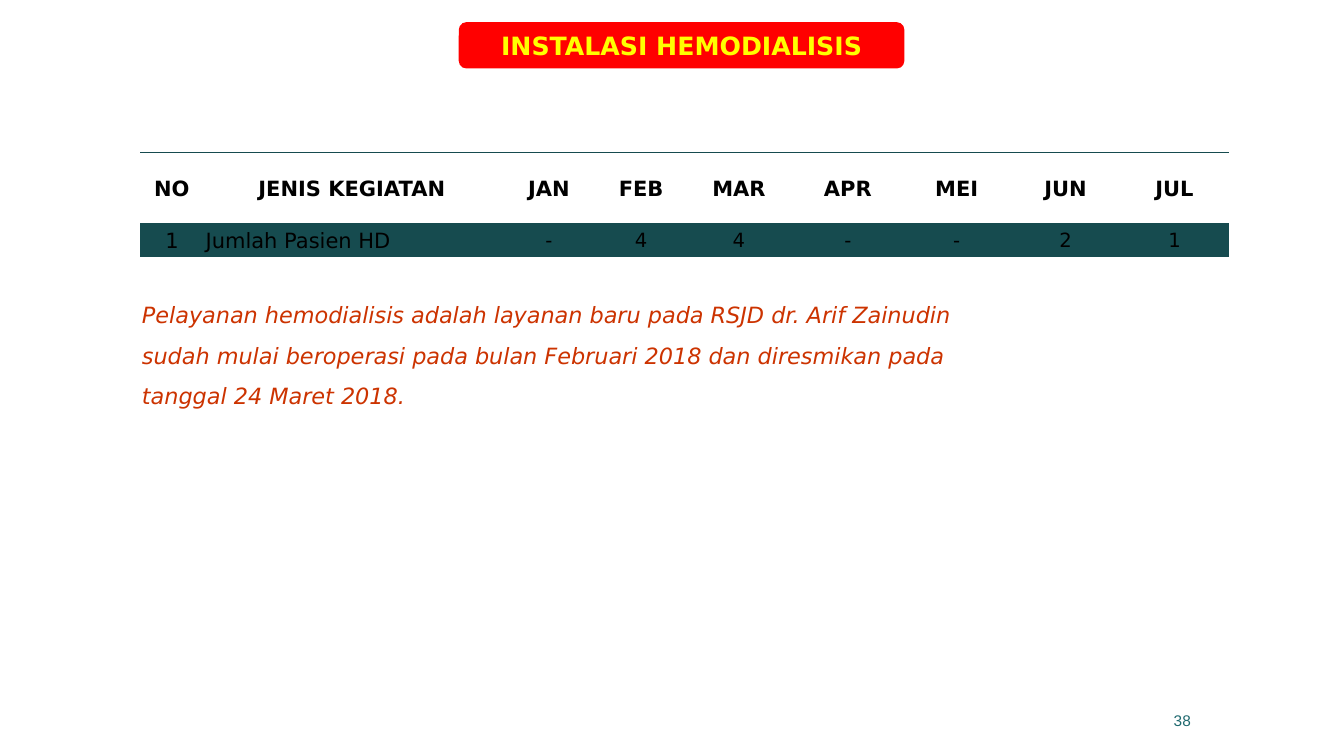
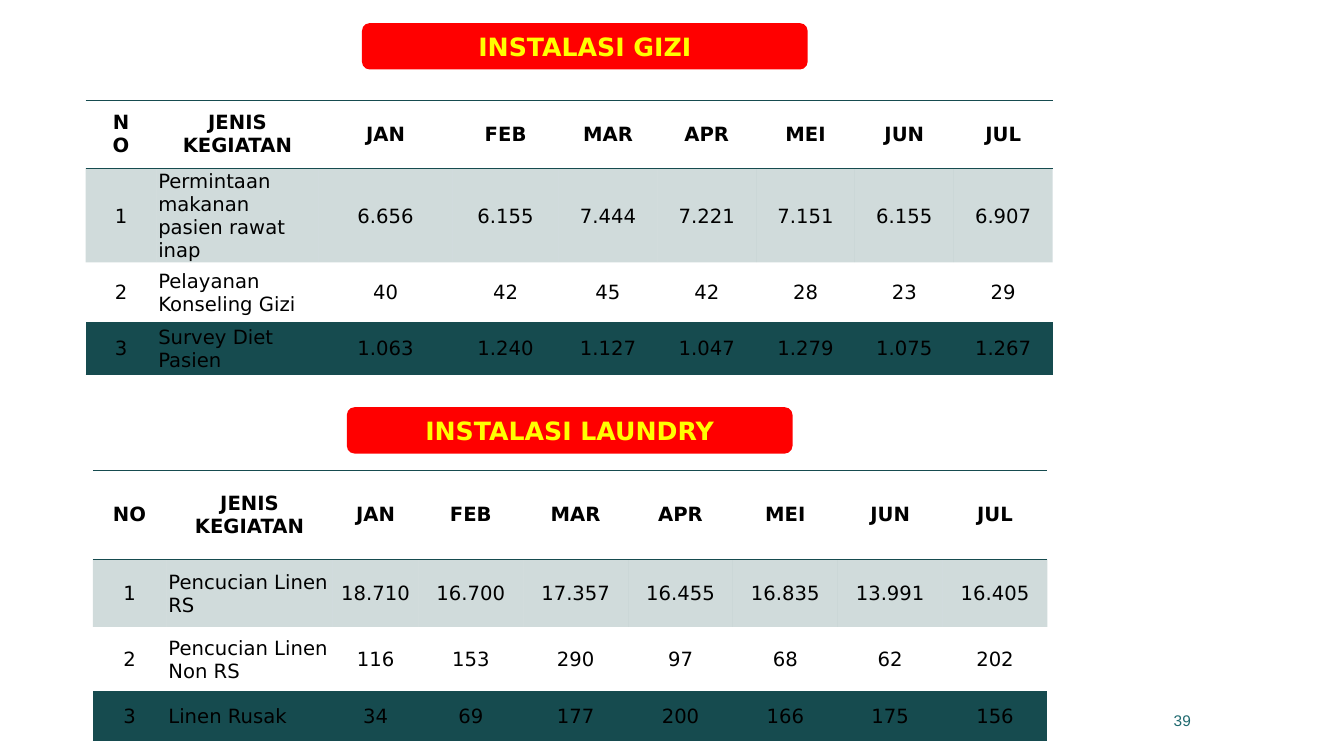
from lxml import etree
from pptx import Presentation
from pptx import util as u
from pptx.dml.color import RGBColor
from pptx.enum import shapes, text
from pptx.oxml.ns import qn

PX = 9144  # 100 px to the inch
SANS, ARIAL = "DejaVu Sans", "Arial"
BLACK = RGBColor(0x00, 0x00, 0x00)
RED = RGBColor(0xFF, 0x00, 0x00)
YELLOW = RGBColor(0xFF, 0xFF, 0x00)
RUST = RGBColor(0xCC, 0x33, 0x00)
TEAL = RGBColor(0x16, 0x4B, 0x4F)
PAGE_TEAL = RGBColor(0x1F, 0x69, 0x6F)
PLAIN_TABLE = "{2D5ABB26-0587-4C30-8999-92F81FD0307C}"
LEFT, CENTER, RIGHT = (text.PP_ALIGN.LEFT, text.PP_ALIGN.CENTER,
                       text.PP_ALIGN.RIGHT)

PILL_SIZE = (442, 46)
PAGE_BOX = (880, 695, 311, 40)
NOTE_BOX = (131, 281, 850, 131)
HEADER = ["NO", "JENIS KEGIATAN", "JAN", "FEB", "MAR", "APR", "MEI", "JUN", "JUL"]

# The first section of a slide gives its title.
SLIDES = [
    dict(page="38",
         sections=[
             dict(name="INSTALASI HEMODIALISIS", pill=(455, 22), table=(139, 151),
                  cols=[63, 294, 97, 86] + [108] * 5, rows=[71, 32],
                  label_size=15, header_inset=(2, 2),
                  data=[("Jumlah Pasien HD", "- 4 4 - - 2 1")]),
         ],
         note=["Pelayanan hemodialisis adalah layanan baru pada RSJD dr. Arif Zainudin",
               "sudah mulai beroperasi pada bulan Februari 2018 dan diresmikan pada "
               "tanggal 24 Maret 2018."]),
    dict(page="39",
         sections=[
             dict(name="INSTALASI GIZI", pill=(359, 23), table=(85, 100),
                  cols=[70, 161, 133, 105] + [98] * 5, rows=[67, 93, 59, 52],
                  label_size=14, header_inset=(20, 8),
                  data=[("Permintaan makanan pasien rawat inap",
                         "6.656 6.155 7.444 7.221 7.151 6.155 6.907"),
                        ("Pelayanan Konseling Gizi", "40 42 45 42 28 23 29"),
                        ("Survey Diet Pasien",
                         "1.063 1.240 1.127 1.047 1.279 1.075 1.267")]),
             dict(name="INSTALASI LAUNDRY", pill=(344, 404), table=(92, 467),
                  cols=[73, 165, 85] + [104] * 6, rows=[88, 67, 64, 49],
                  label_size=14, header_inset=(20, 7),
                  data=[("Pencucian Linen RS",
                         "18.710 16.700 17.357 16.455 16.835 13.991 16.405"),
                        ("Pencucian Linen Non RS", "116 153 290 97 68 62 202"),
                        ("Linen Rusak", "34 69 177 200 166 175 156")]),
         ],
         note=[]),
]


def px(*values):
    return [u.Emu(v * PX) for v in values]


def write(tf, lines, size, color, font=SANS, bold=False, italic=False,
          align=LEFT, spacing=None):
    for i, line in enumerate(lines):
        p = tf.paragraphs[0] if i == 0 else tf.add_paragraph()
        p.alignment = align
        if spacing:
            p.line_spacing = spacing
        r = p.add_run()
        r.text = line
        f = r.font
        f.name, f.size, f.bold, f.italic = font, u.Pt(size), bold, italic
        f.color.rgb = color


def add_text(s, box, lines, size, color, anchor=text.MSO_ANCHOR.TOP, **fmt):
    tf = s.shapes.add_textbox(*px(*box)).text_frame
    tf.word_wrap = True
    tf.vertical_anchor = anchor
    write(tf, lines, size, color, **fmt)


def add_pill(s, name, pos, is_title):
    """Draw a red heading; a title lies over it in the slide's placeholder."""
    box = px(*pos, *PILL_SIZE)
    sp = s.shapes.add_shape(shapes.MSO_SHAPE.ROUNDED_RECTANGLE, *box)
    sp.shadow.inherit = False
    sp.fill.solid()
    sp.fill.fore_color.rgb = RED
    sp.line.fill.background()
    if is_title:
        sp = s.shapes.title
        sp.left, sp.top, sp.width, sp.height = box
        s.shapes._spTree.append(sp._element)
    tf = sp.text_frame
    tf.word_wrap = True
    tf.auto_size = text.MSO_AUTO_SIZE.NONE
    tf.vertical_anchor = text.MSO_ANCHOR.MIDDLE
    write(tf, [name], 18, YELLOW, bold=True, align=CENTER)


def add_border(cell, side):
    ln = etree.SubElement(cell._tc.get_or_add_tcPr(), qn("a:" + side), w="12700")
    fill = etree.SubElement(ln, qn("a:solidFill"))
    etree.SubElement(fill, qn("a:srgbClr"), val=str(TEAL))


def fill_cell(cell, shaded):
    if not shaded:
        cell.fill.background()
        return
    cell.fill.solid()
    cell.fill.fore_color.rgb = TEAL
    color = cell._tc.tcPr.find(".//" + qn("a:srgbClr"))
    etree.SubElement(color, qn("a:alpha"), val="20000")


def add_month_table(s, section):
    cols, rows = section["cols"], section["rows"]
    grid = [HEADER] + [[str(n), label, *values.split()]
                       for n, (label, values) in enumerate(section["data"], 1)]
    frame = s.shapes.add_table(len(rows), len(cols),
                               *px(*section["table"], sum(cols), sum(rows)))
    table = frame.table
    table._tbl.tblPr.find(qn("a:tableStyleId")).text = PLAIN_TABLE
    for col, width in zip(table.columns, cols):
        col.width = u.Emu(width * PX)
    for row, height in zip(table.rows, rows):
        row.height = u.Emu(height * PX)

    for i, line in enumerate(grid):
        head = i == 0
        side, top = section["header_inset"] if head else (2, 2)
        bottom = top if top > 2 else 0
        for j, value in enumerate(line):
            cell = table.cell(i, j)
            if head:
                add_border(cell, "lnT")
            if head or i == len(grid) - 1:
                add_border(cell, "lnB")
            fill_cell(cell, shaded=i % 2 == 1)
            cell.vertical_anchor = text.MSO_ANCHOR.MIDDLE
            cell.margin_left, cell.margin_top, cell.margin_right, \
                cell.margin_bottom = px(side, top, side, bottom)
            write(cell.text_frame, [value],
                  section["label_size"] if head or j < 2 else 14, BLACK,
                  bold=head, align=LEFT if j == 1 and not head else CENTER)


def main():
    prs = Presentation()
    prs.slide_width, prs.slide_height = px(1333, 750)
    for content in SLIDES:
        s = prs.slides.add_slide(prs.slide_layouts[5])
        for i, section in enumerate(content["sections"]):
            add_pill(s, section["name"], section["pill"], is_title=i == 0)
            add_month_table(s, section)
        if content["note"]:
            add_text(s, NOTE_BOX, content["note"], 16, RUST, italic=True, spacing=1.5)
        add_text(s, PAGE_BOX, [content["page"]], 11, PAGE_TEAL, font=ARIAL,
                 align=RIGHT, anchor=text.MSO_ANCHOR.MIDDLE)
    prs.save("out.pptx")


if __name__ == "__main__":
    main()
